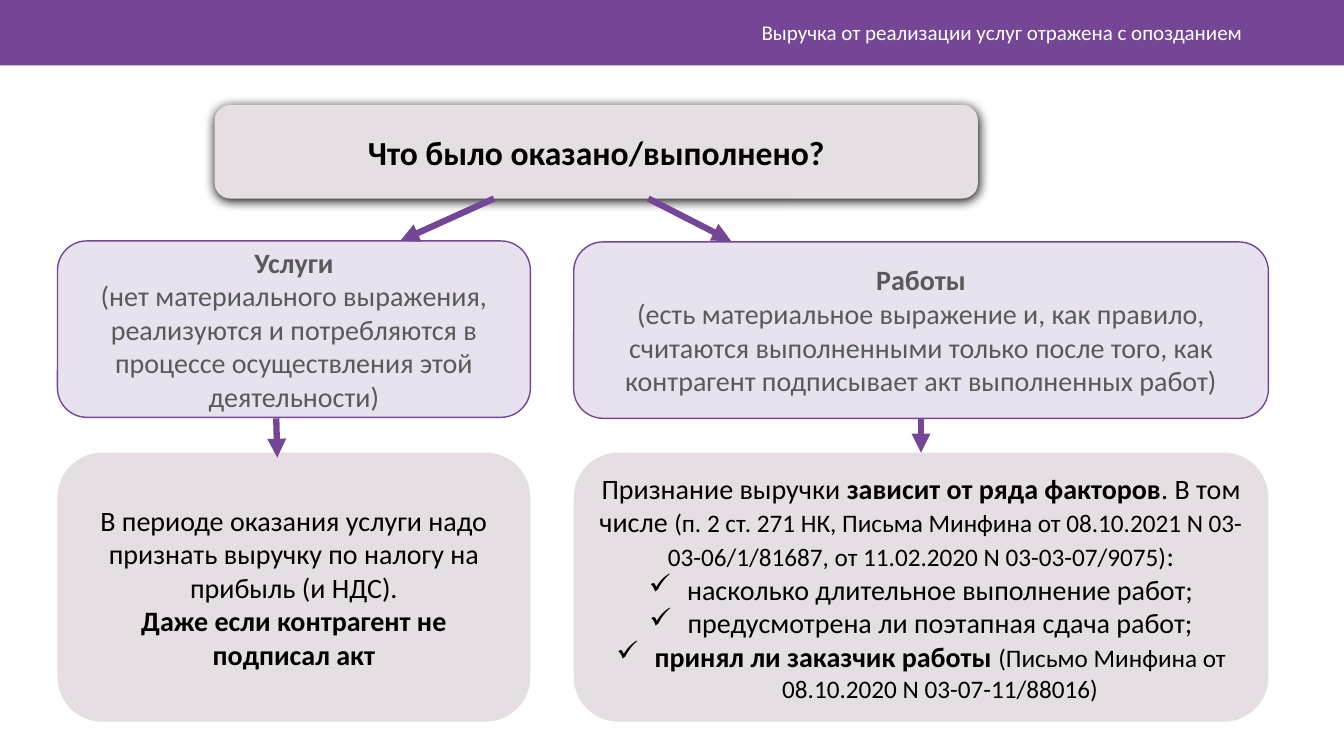
from dataclasses import dataclass

from lxml import etree
from pptx import Presentation
from pptx.dml.color import RGBColor
from pptx.enum.shapes import MSO_CONNECTOR, MSO_SHAPE
from pptx.enum.text import MSO_ANCHOR, PP_ALIGN
from pptx.oxml.ns import qn
from pptx.util import Inches, Pt

RECTANGLE = MSO_SHAPE.RECTANGLE
ROUNDED = MSO_SHAPE.ROUNDED_RECTANGLE
STRAIGHT = MSO_CONNECTOR.STRAIGHT
MIDDLE = MSO_ANCHOR.MIDDLE
CENTER = PP_ALIGN.CENTER
RIGHT = PP_ALIGN.RIGHT
TOP_SIDE, BOTTOM_SIDE = 0, 2


@dataclass(frozen=True)
class Theme:
    font: str = "Calibri"
    accent: str = "764696"
    white: str = "FFFFFF"
    black: str = "000000"
    gray: str = "595959"
    panel: str = "E5DEE3"
    option: str = "E8E2EE"
    header_size: float = 15
    question_size: float = 24
    body_size: float = 20
    reference_size: float = 18
    outline_width: float = 1
    arrow_width: float = 4.5


THEME = Theme()


def color(value):
    return RGBColor.from_string(value)


def add_box(slide, kind, box, fill, outline=None):
    shape = slide.shapes.add_shape(kind, *map(Inches, box))
    shape.shadow.inherit = False
    shape.fill.solid()
    shape.fill.fore_color.rgb = color(fill)
    if outline:
        shape.line.color.rgb = color(outline)
        shape.line.width = Pt(THEME.outline_width)
    else:
        shape.line.fill.background()
    return shape


def add_bullet(paragraph, mark="✓"):
    properties = paragraph._p.get_or_add_pPr()
    properties.set("marL", str(Inches(0.38)))
    properties.set("indent", str(-Inches(0.38)))
    etree.SubElement(properties, qn("a:buChar")).set("char", mark)


def write(shape, paragraphs, ink, size, align=CENTER):
    frame = shape.text_frame
    frame.word_wrap = True
    frame.vertical_anchor = MIDDLE
    for index, (bulleted, runs) in enumerate(paragraphs):
        paragraph = frame.add_paragraph() if index else frame.paragraphs[0]
        paragraph.alignment = align
        if bulleted:
            add_bullet(paragraph)
        for text, bold, run_size in runs:
            run = paragraph.add_run()
            run.text = text
            run.font.name = THEME.font
            run.font.size = Pt(run_size or size)
            run.font.bold = bold
            run.font.color.rgb = color(ink)


def plain(text):
    return text, False, None


def strong(text):
    return text, True, None


def reference(text):
    return text, False, THEME.reference_size


def add_glow_shadow(shape):
    effects = shape._element.spPr.find(qn("a:effectLst"))
    shadow = etree.SubElement(effects, qn("a:outerShdw"), blurRad=str(Pt(8.5)),
                              dist=str(Pt(1)), dir="5400000", rotWithShape="0")
    etree.SubElement(shadow, qn("a:srgbClr"), val=THEME.black)


def add_arrow(slide, start, end):
    arrow = slide.shapes.add_connector(STRAIGHT, *map(Inches, start + end))
    arrow.line.color.rgb = color(THEME.accent)
    arrow.line.width = Pt(THEME.arrow_width)
    etree.SubElement(arrow.line._get_or_add_ln(), qn("a:tailEnd"), type="triangle")
    etree.SubElement(arrow._element.spPr, qn("a:effectLst"))
    return arrow


def add_header(slide, box, title):
    left, top, width, height = box
    add_box(slide, RECTANGLE, box, THEME.accent)
    label_box = (left + 3.54, top + 0.12, 8.88, height - 0.25)
    label = slide.shapes.add_textbox(*map(Inches, label_box))
    write(label, [(False, [plain(title)])], THEME.white, THEME.header_size, RIGHT)


def add_question(slide, box, text):
    shape = add_box(slide, ROUNDED, box, THEME.panel)
    add_glow_shadow(shape)
    write(shape, [(False, [strong(text)])], THEME.black, THEME.question_size)


def add_branch(slide, box, name, description, outcome):
    left, top, width, bottom = box
    option_height, outcome_height = 1.75, 2.67
    option = add_box(slide, ROUNDED, (left, top, width, option_height),
                     THEME.option, THEME.accent)
    write(option, [(False, [strong(name)]), (False, [plain(description)])],
          THEME.gray, THEME.body_size)
    result = add_box(slide, ROUNDED,
                     (left, bottom - outcome_height, width, outcome_height), THEME.panel)
    write(result, outcome, THEME.black, THEME.body_size)
    return option, result


def build_slide(presentation):
    slide = presentation.slides.add_slide(presentation.slide_layouts[6])
    add_header(slide, (0, 0, 13.33, 0.65),
               "Выручка от реализации услуг отражена с опозданием")
    add_question(slide, (2.13, 1.04, 7.57, 0.93), "Что было оказано/выполнено?")
    add_branch(
        slide, (0.57, 2.39, 4.69, 7.16), "Услуги",
        "(нет материального выражения, реализуются и потребляются в процессе "
        "осуществления этой деятельности)",
        [(False, [plain("В периоде оказания услуги надо признать выручку "
                        "по налогу на прибыль (и НДС).")]),
         (False, [strong("Даже если контрагент не подписал акт")])])
    works, factors = add_branch(
        slide, (5.69, 2.4, 6.89, 7.16), "Работы",
        "(есть материальное выражение и, как правило, считаются выполненными только "
        "после того, как контрагент подписывает акт выполненных работ)",
        [(False, [plain("Признание выручки "), strong("зависит от ряда факторов"),
                  plain(". В том числе "),
                  reference("(п. 2 ст. 271 НК, Письма Минфина от 08.10.2021 "
                            "N 03-03-06/1/81687, от 11.02.2020 N 03-03-07/9075)"),
                  plain(":")]),
         (True, [plain("насколько длительное выполнение работ;")]),
         (True, [plain("предусмотрена ли поэтапная сдача работ;")]),
         (True, [strong("принял ли заказчик работы "),
                 reference("(Письмо Минфина от 08.10.2020 N 03-07-11/88016)")])])
    add_arrow(slide, (4.9, 1.97), (3.97, 2.39))
    add_arrow(slide, (6.43, 1.97), (7.25, 2.39))
    add_arrow(slide, (2.74, 4.15), (2.75, 4.54))
    works_arrow = add_arrow(slide, (9.14, 4.15), (9.14, 4.49))
    works_arrow.begin_connect(works, BOTTOM_SIDE)
    works_arrow.end_connect(factors, TOP_SIDE)


def main():
    presentation = Presentation()
    presentation.slide_width = Inches(13.33)
    presentation.slide_height = Inches(7.5)
    build_slide(presentation)
    presentation.save("out.pptx")


if __name__ == "__main__":
    main()
